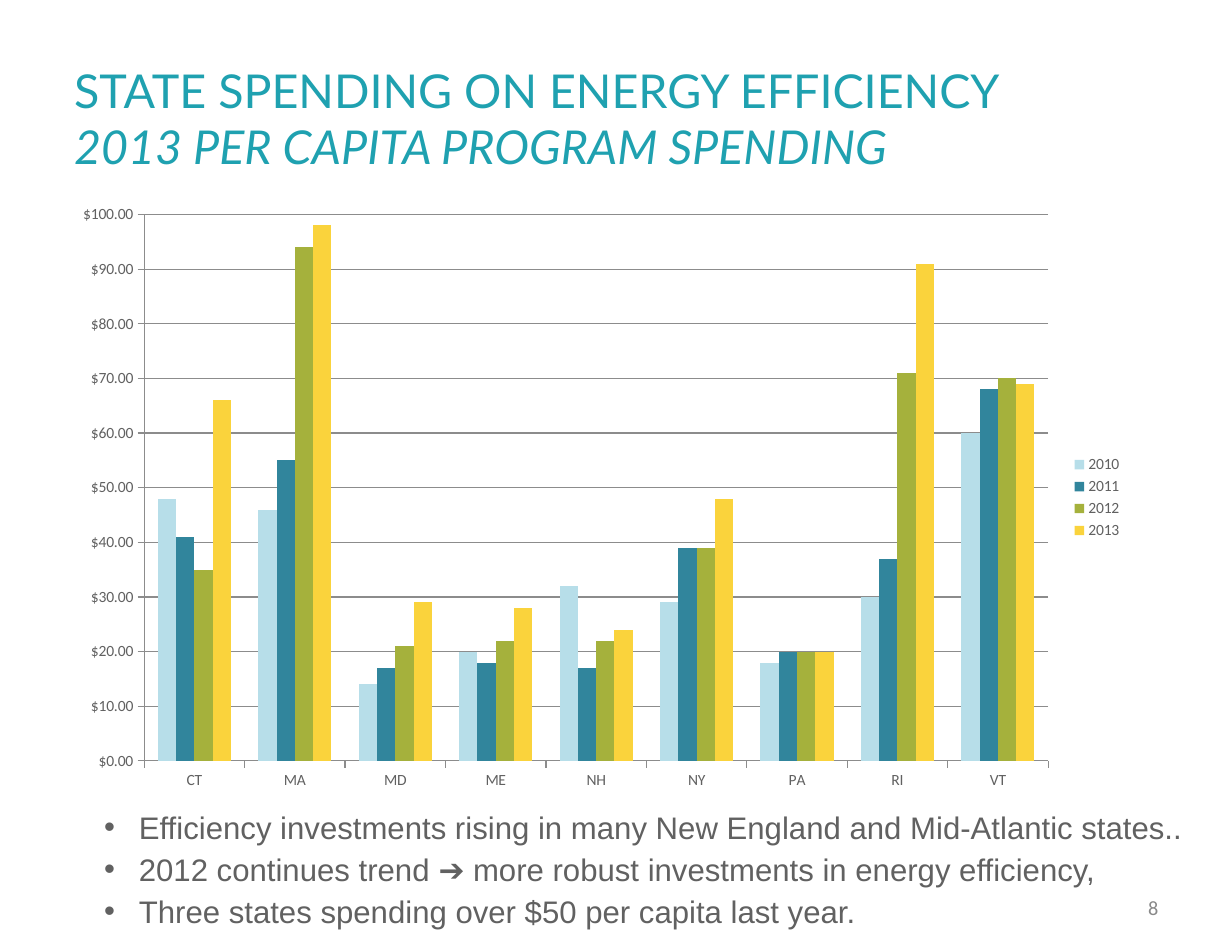
"""Build the slide on state spending for energy efficiency."""
from lxml import etree
from pptx import Presentation
from pptx.chart import data as cd
from pptx.dml import color as dc
from pptx.enum import chart as ch, text as tx
from pptx.oxml import ns
from pptx.util import Cm, Pt

HUES = {"title": "1FA1B0", "body": "616161", "page": "898989", "line": "8C8C8C",
        "2010": "B7DEE9", "2011": "31859C", "2012": "A5B13C", "2013": "FAD33C"}
STATES = ["CT", "MA", "MD", "ME", "NH", "NY", "PA", "RI", "VT"]
SPEND = {"2010": [48, 46, 14, 20, 32, 29, 18, 30, 60],
         "2011": [41, 55, 17, 18, 17, 39, 20, 37, 68],
         "2012": [35, 94, 21, 22, 22, 39, 20, 71, 70],
         "2013": [66, 98, 29, 28, 24, 48, 20, 91, 69]}
POINTS = ["Efficiency investments rising in many New England and Mid-Atlantic states..",
          "2012 continues trend ➔ more robust investments in energy efficiency,",
          "Three states spending over $50 per capita last year."]


def hue(key):
    """Return the named colour."""
    return dc.RGBColor.from_string(HUES[key])


def style(font, face, size, key):
    """Set face, size and colour of a font."""
    font.name, font.size = face, Pt(size)
    font.color.rgb = hue(key)


def add_text(slide, box, pad, anchor):
    """Add a wrapping text box and return its frame."""
    frame = slide.shapes.add_textbox(*map(Cm, box)).text_frame
    frame.word_wrap = True
    frame.vertical_anchor = anchor
    frame.margin_left = frame.margin_right = Cm(pad)
    frame.margin_top = frame.margin_bottom = Cm(pad / 2)
    return frame


def add_title(slide, box):
    """Place the two-line title, its second line in italics."""
    shape = slide.shapes.title
    shape.left, shape.top, shape.width, shape.height = map(Cm, box)
    frame = shape.text_frame
    frame.vertical_anchor = tx.MSO_ANCHOR.MIDDLE
    frame.margin_left = frame.margin_right = Cm(0.28)
    frame.margin_top = frame.margin_bottom = Cm(0.14)
    para = frame.paragraphs[0]
    para.text = "STATE SPENDING ON ENERGY EFFICIENCY\v2013 PER CAPITA PROGRAM SPENDING"
    para.alignment = tx.PP_ALIGN.LEFT
    for run in para.runs:
        style(run.font, "Lato", 30, "title")
    para.runs[1].font.italic = True


def add_graph(slide, box):
    """Place the clustered columns of spending by state and year."""
    data = cd.CategoryChartData()
    data.categories = STATES
    for year, vals in SPEND.items():
        data.add_series(year, vals)
    kind = ch.XL_CHART_TYPE.COLUMN_CLUSTERED
    graph = slide.shapes.add_chart(kind, *map(Cm, box), data).chart
    style(graph.font, "Calibri", 10, "body")
    graph.has_title = False
    graph.has_legend = True
    graph.legend.position = ch.XL_LEGEND_POSITION.RIGHT
    graph.legend.include_in_layout = False
    plot = graph.plots[0]
    plot.gap_width, plot.overlap, plot.vary_by_categories = 150, 0, False
    for bars in plot.series:
        bars.format.fill.solid()
        bars.format.fill.fore_color.rgb = hue(bars.name)
    axis = graph.value_axis
    axis.minimum_scale, axis.maximum_scale, axis.major_unit = 0, 100, 10
    axis.tick_labels.number_format = '"$"#,##0.00'
    axis.tick_labels.number_format_is_linked = False
    axis.has_major_gridlines = True
    for part in (axis, graph.category_axis, axis.major_gridlines):
        part.format.line.color.rgb = hue("line")
        part.format.line.width = Pt(0.75)
    for part in (axis, graph.category_axis):
        part.major_tick_mark = ch.XL_TICK_MARK.OUTSIDE


def add_points(slide, box):
    """Place the bulleted remarks."""
    frame = add_text(slide, box, 0.25, tx.MSO_ANCHOR.TOP)
    frame.text = "\n".join(POINTS)
    for num, para in enumerate(frame.paragraphs):
        props = para._p.get_or_add_pPr()
        props.set("marL", str(Cm(0.79)))
        props.set("indent", str(-Cm(0.79)))
        etree.SubElement(props, ns.qn("a:buFont")).set("typeface", "Arial")
        etree.SubElement(props, ns.qn("a:buChar")).set("char", "•")
        para.space_before = Pt(3 if num else 0)
        style(para.font, "Arial", 20, "body")
        for run in para.runs:
            style(run.font, "Arial", 20, "body")


def add_page(slide, box):
    """Place the page number."""
    frame = add_text(slide, box, 0.28, tx.MSO_ANCHOR.MIDDLE)
    frame.text = "8"
    para = frame.paragraphs[0]
    para.alignment = tx.PP_ALIGN.RIGHT
    style(para.runs[0].font, "Calibri", 13, "page")


def main():
    """Build and save the slide."""
    deck = Presentation()
    deck.slide_width, deck.slide_height = Cm(27.94), Cm(21.59)
    slide = deck.slides.add_slide(deck.slide_layouts.get_by_name("Title Only"))
    add_points(slide, (2.11, 18.21, 26.87, 3.89))
    add_page(slide, (20.02, 20.02, 6.53, 1.14))
    add_title(slide, (1.4, 0.86, 25.15, 3.61))
    add_graph(slide, (1.4, 4.39, 24.31, 13.79))
    deck.save("out.pptx")


if __name__ == "__main__":
    main()
